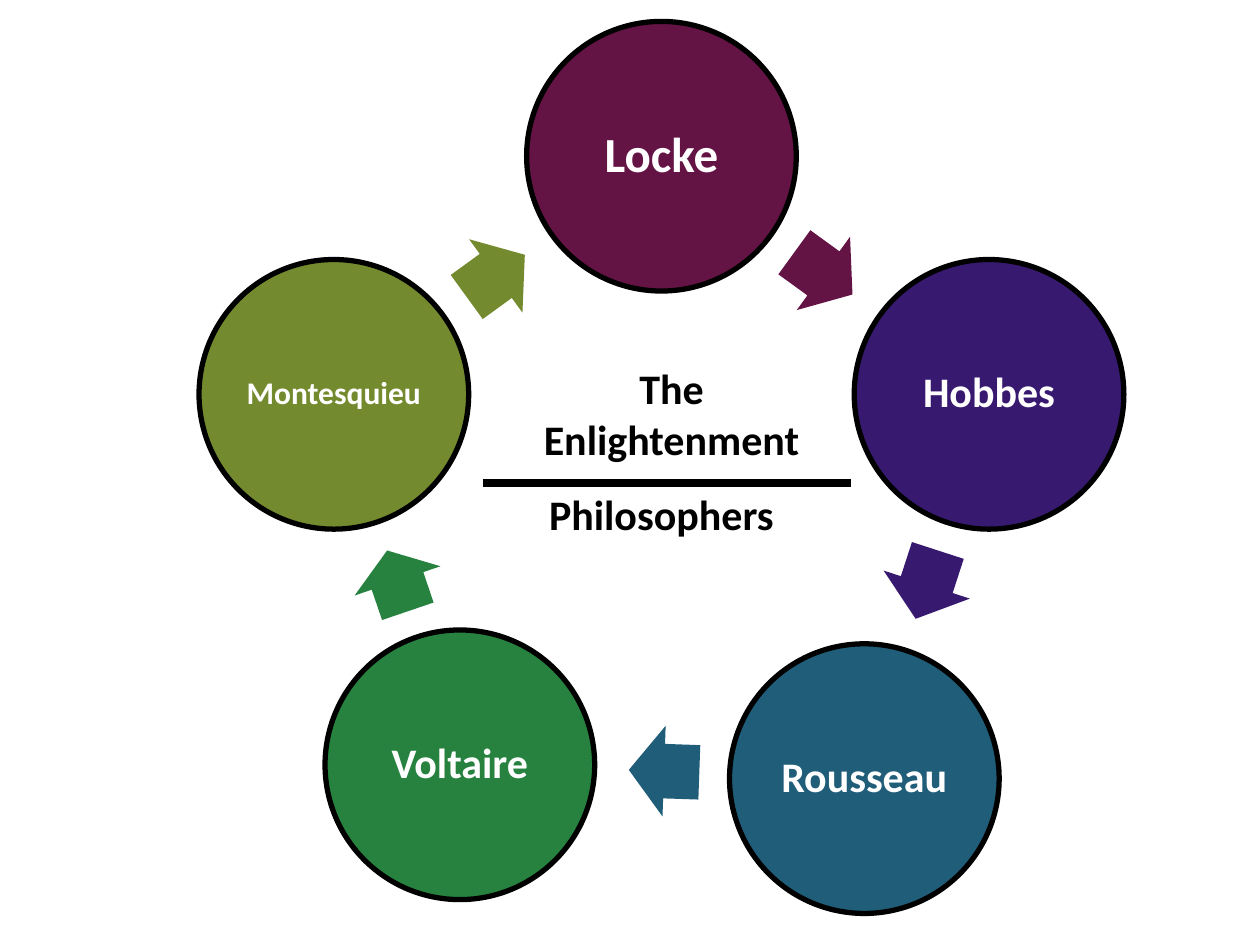
"""Build a cycle slide of five Enlightenment philosophers."""
from lxml import etree
from pptx import Presentation
from pptx.dml.color import RGBColor
from pptx.enum.shapes import MSO_CONNECTOR, MSO_SHAPE
from pptx.enum.text import MSO_ANCHOR, PP_ALIGN
from pptx.oxml.ns import qn
from pptx.util import Inches, Pt

OVAL, ARROW = MSO_SHAPE.OVAL, MSO_SHAPE.RIGHT_ARROW
STRAIGHT = MSO_CONNECTOR.STRAIGHT
CENTER, MIDDLE, TOP = PP_ALIGN.CENTER, MSO_ANCHOR.MIDDLE, MSO_ANCHOR.TOP

FONT, BLACK, WHITE = "Calibri", "000000", "FFFFFF"
DIAMETER, ARROW_HEIGHT = 2.14, 0.72

# name, size, colour, circle (left, top), arrow (left, top, width, rotation)
PHILOSOPHERS = [
    ("Locke", 28, "641345", (4.18, 0.17), (6.25, 1.81, 0.57, 36)),
    ("Hobbes", 24, "37196F", (6.78, 2.06), (7.07, 4.28, 0.57, 108)),
    ("Rousseau", 24, "1F5D79", (5.79, 5.11), (4.99, 5.76, 0.56, 182)),
    ("Voltaire", 24, "278240", (2.58, 5), (2.9, 4.25, 0.51, 251.2)),
    ("Montesquieu", 18, "748A2F", (1.58, 2.06), (3.65, 1.83, 0.57, 324)),
]
TITLES = [
    ("Philosophers", (4, 3.83, 2.5, 0.5)),
    ("The Enlightenment", (4.08, 2.83, 2.5, 0.91)),
]
RULE = (3.83, 3.83, 6.75, 3.83)


def rgb(value):
    return RGBColor.from_string(value)


def write(sp, text, size, color, anchor):
    tf = sp.text_frame
    tf.word_wrap = True
    tf.vertical_anchor = anchor
    tf.text = text
    p = tf.paragraphs[0]
    p.alignment = CENTER
    font = p.runs[0].font
    font.name, font.size, font.bold = FONT, Pt(size), True
    font.color.rgb = rgb(color)
    return tf


def add_filled(slide, kind, box, color):
    sp = slide.shapes.add_shape(kind, *map(Inches, box))
    sp.shadow.inherit = False
    sp.fill.solid()
    sp.fill.fore_color.rgb = rgb(color)
    return sp


def add_circle(slide, name, size, color, corner):
    sp = add_filled(slide, OVAL, (*corner, DIAMETER, DIAMETER), color)
    sp.line.color.rgb = rgb(BLACK)
    sp.line.width = Pt(3)
    tf = write(sp, name, size, WHITE, MIDDLE)
    tf.margin_left = tf.margin_right = Inches(0.03)
    tf.margin_top = tf.margin_bottom = Inches(0.03)
    tf.paragraphs[0].line_spacing = 0.9


def add_arrow(slide, color, left, top, width, rotation):
    sp = add_filled(slide, ARROW, (left, top, width, ARROW_HEIGHT), color)
    sp.line.fill.background()
    sp.rotation = rotation
    sp.adjustments[0], sp.adjustments[1] = 0.6, 0.5


def add_rule(slide):
    line = slide.shapes.add_connector(STRAIGHT, *map(Inches, RULE))
    line.line.color.rgb = rgb(BLACK)
    line.line.width = Pt(4.5)
    etree.SubElement(line._element.spPr, qn("a:effectLst"))


def main():
    prs = Presentation()
    prs.slide_width, prs.slide_height = Inches(10), Inches(7.5)
    slide = prs.slides.add_slide(prs.slide_layouts[6])
    for name, size, color, corner, arrow in PHILOSOPHERS:
        add_circle(slide, name, size, color, corner)
        add_arrow(slide, color, *arrow)
    add_rule(slide)
    for text, box in TITLES:
        write(slide.shapes.add_textbox(*map(Inches, box)), text, 24, BLACK, TOP)
    prs.save("out.pptx")


if __name__ == "__main__":
    main()
